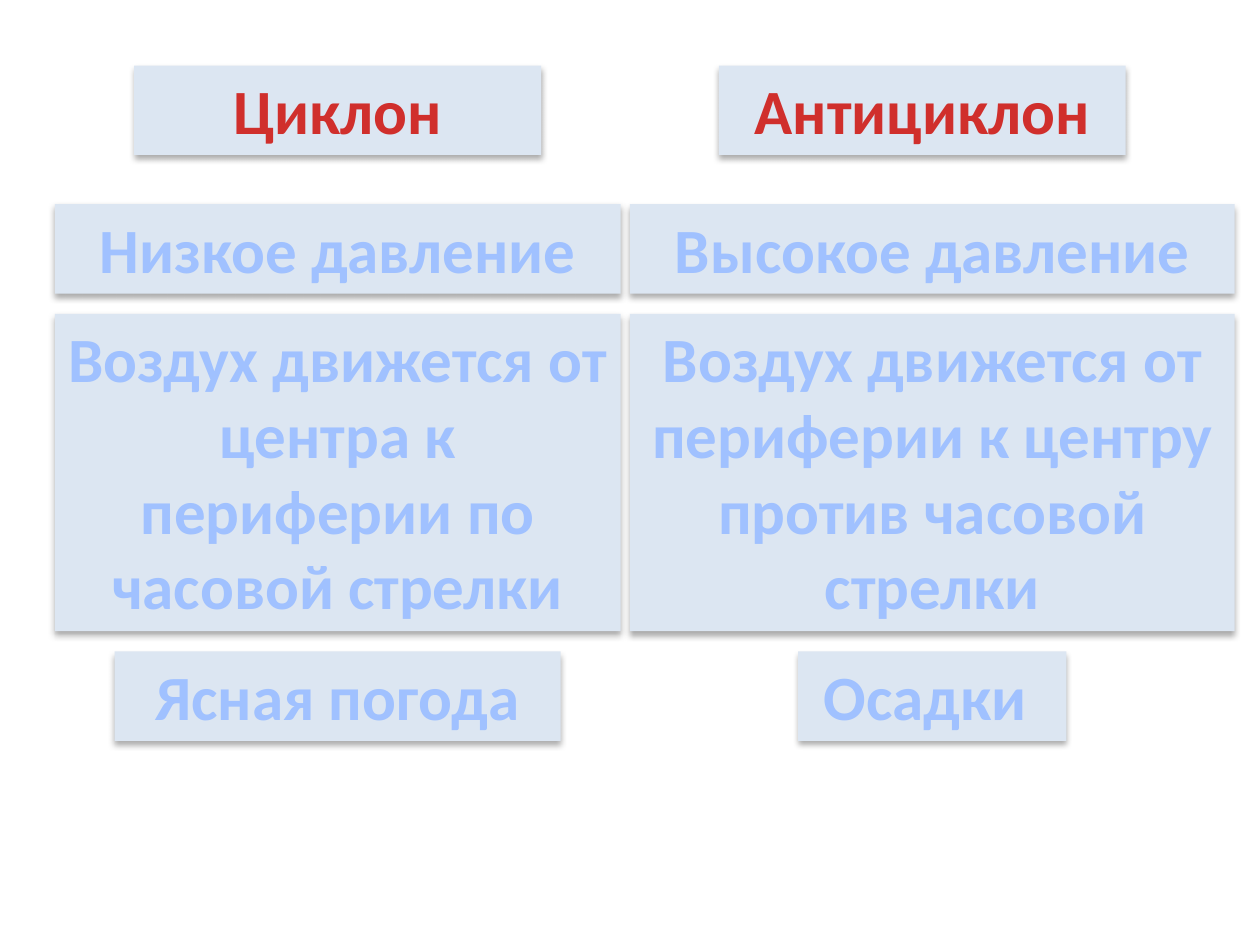
from dataclasses import dataclass

from lxml import etree
from pptx import Presentation
from pptx import util as u
from pptx.dml.color import RGBColor
from pptx.enum import shapes, text
from pptx.oxml import ns

PANEL = RGBColor(0xDC, 0xE6, 0xF2)
SHADOW = RGBColor(0x00, 0x00, 0x00)
OUTLINE = RGBColor(0x46, 0x7A, 0xB8)
PALE, SKY, NAVY = (RGBColor(0xBF, 0xD3, 0xF9), RGBColor(0xA0, 0xC1, 0xFF),
                   RGBColor(0x00, 0x3D, 0x85))
BLUE_STOPS = ((0, PALE), (9, SKY), (50, NAVY), (79, SKY), (100, PALE))
RED_STOPS = ((0, RGBColor(0xFC, 0x7C, 0x7A)), (75, RGBColor(0xD0, 0x2F, 0x2C)),
             (100, RGBColor(0xC7, 0x05, 0x00)))


@dataclass
class Row:
    top: float
    height: float
    left_text: str
    right_text: str
    left_width: float
    right_width: float
    left_center: float = 2.68
    right_center: float = 7.4
    heading: bool = False


ROWS = [
    Row(0.52, 0.71, "Циклон", "Антициклон", 3.23, 3.23,
        right_center=7.32, heading=True),
    Row(1.62, 0.71, "Низкое давление", "Высокое давление", 4.49, 4.8),
    Row(2.49, 2.52, "Воздух движется от центра к периферии по часовой стрелки",
        "Воздух движется от периферии к центру против часовой стрелки", 4.49, 4.8),
    Row(5.17, 0.71, "Ясная погода", "Осадки ", 3.54, 2.13),
]


def add_xml(parent, tag: str, **attrs):
    """Append a DrawingML element and return it."""
    return etree.SubElement(parent, ns.qn(f"a:{tag}"),
                            {k: str(v) for k, v in attrs.items()})


def add_shadow(sp) -> None:
    sp.shadow.inherit = False
    effects = sp._element.spPr.find(ns.qn("a:effectLst"))
    shadow = add_xml(effects, "outerShdw", blurRad=u.Pt(3.5), dist=u.Pt(2.2),
                     dir=90 * 60000, rotWithShape=0)
    add_xml(add_xml(shadow, "srgbClr", val=SHADOW), "alpha", val=32000)


def style_run(r, heading: bool) -> None:
    r.font.size, r.font.bold = u.Pt(36), True
    rpr = r._r.get_or_add_rPr()
    if not heading:
        line = add_xml(rpr, "ln", w=u.Pt(0.83))
        add_xml(add_xml(line, "solidFill"), "srgbClr", val=OUTLINE)
    grad = add_xml(rpr, "gradFill")
    stops = add_xml(grad, "gsLst")
    for position, color in RED_STOPS if heading else BLUE_STOPS:
        add_xml(add_xml(stops, "gs", pos=position * 1000), "srgbClr", val=color)
    add_xml(grad, "lin", ang=90 * 60000, scaled=0)
    r.font.name = "Calibri"


def add_panel(s, row: Row, label: str, center: float, width: float) -> None:
    sp = s.shapes.add_shape(
        shapes.MSO_SHAPE.RECTANGLE, u.Inches(center - width / 2),
        u.Inches(row.top), u.Inches(width), u.Inches(row.height))
    sp.fill.solid()
    sp.fill.fore_color.rgb = PANEL
    sp.line.fill.background()
    add_shadow(sp)
    tf = sp.text_frame
    tf.word_wrap = True
    tf.auto_size = text.MSO_AUTO_SIZE.SHAPE_TO_FIT_TEXT
    tf.vertical_anchor = text.MSO_ANCHOR.TOP
    p = tf.paragraphs[0]
    p.alignment = text.PP_ALIGN.CENTER
    r = p.add_run()
    r.text = label
    style_run(r, row.heading)


def main() -> None:
    prs = Presentation()
    prs.slide_width, prs.slide_height = u.Inches(10), u.Inches(7.5)
    s = prs.slides.add_slide(prs.slide_layouts[6])

    # Comparison in two columns, from the bottom row up to the headings
    for row in reversed(ROWS):
        add_panel(s, row, row.left_text, row.left_center, row.left_width)
        add_panel(s, row, row.right_text, row.right_center, row.right_width)

    prs.save("out.pptx")


if __name__ == "__main__":
    main()
